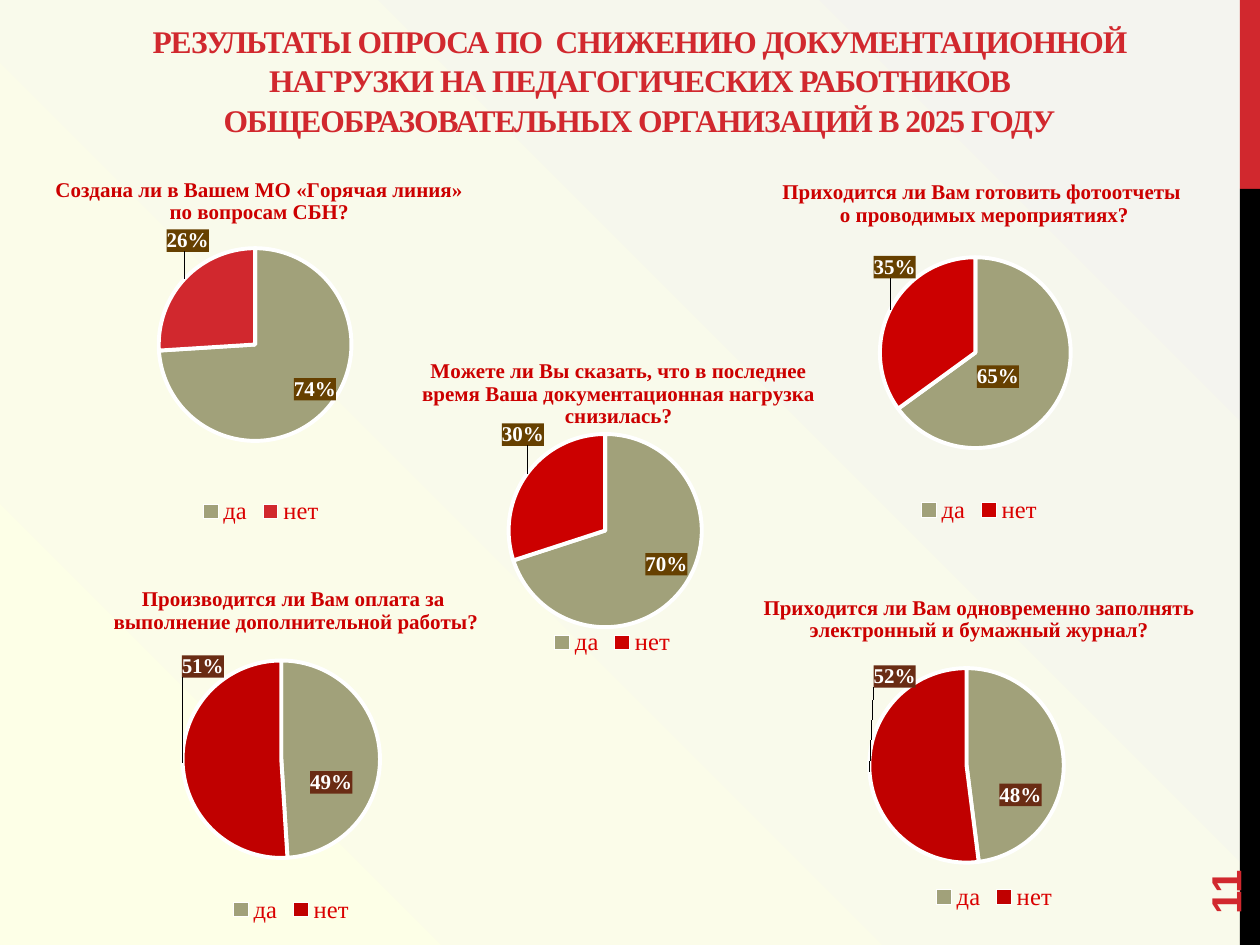
import math
from dataclasses import dataclass

from lxml import etree
from pptx import Presentation
from pptx.chart.data import CategoryChartData
from pptx.dml.color import RGBColor
from pptx.enum.chart import XL_CHART_TYPE, XL_LEGEND_POSITION
from pptx.enum.shapes import MSO_SHAPE
from pptx.enum.text import MSO_ANCHOR, PP_ALIGN
from pptx.oxml import parse_xml
from pptx.oxml.ns import nsdecls, qn
from pptx.util import Inches, Pt

PIE = XL_CHART_TYPE.PIE
BOTTOM = XL_LEGEND_POSITION.BOTTOM
RECTANGLE = MSO_SHAPE.RECTANGLE
CENTER = PP_ALIGN.CENTER

RED = RGBColor(0xD1, 0x28, 0x2E)
TITLE_RED = RGBColor(0xCC, 0x00, 0x00)
DARK_RED = RGBColor(0xC0, 0x00, 0x00)
LEGEND_RED = RGBColor(0xDA, 0x00, 0x00)
OLIVE = RGBColor(0xA1, 0xA1, 0x7A)
BROWN = RGBColor(0x66, 0x40, 0x00)
RUST = RGBColor(0x6A, 0x2C, 0x14)
WHITE = RGBColor(0xFF, 0xFF, 0xFF)
BLACK = RGBColor(0x00, 0x00, 0x00)
CREAM = RGBColor(0xFD, 0xFF, 0xE7)
PALE_GREY = RGBColor(0xF4, 0xF4, 0xEF)
SERIF = "Times New Roman"


@dataclass
class Survey:
    """One question; box, title, legend and labels are in slide inches."""
    question: str
    shares: tuple
    box: tuple
    plot: tuple  # fractions of the box
    title_at: tuple
    legend_at: tuple
    labels_at: tuple  # label centres
    no_color: RGBColor
    label_color: RGBColor


SURVEYS = [
    Survey("Создана ли в Вашем МО «Горячая линия»\nпо вопросам СБН?",
           (0.74, 0.26), (-0.45, 1.22, 5, 3), (0.09, 0.25, 0.81, 0.51),
           (0.41, 1.37), (1.55, 3.93), ((2.5, 3.09), (1.49, 1.91)), RED, BROWN),
    Survey("Приходится ли Вам готовить фотоотчеты\n о проводимых мероприятиях?",
           (0.65, 0.35), (5.34, 1.24, 4.85, 2.97), (0.09, 0.27, 0.81, 0.51),
           (6.18, 1.39), (7.25, 3.9), ((7.92, 2.99), (7.1, 2.12)), TITLE_RED, BROWN),
    Survey("Приходится ли Вам одновременно заполнять\nэлектронный и бумажный журнал?",
           (0.48, 0.52), (5.5, 4.56, 4.72, 2.86), (0.02, 0.26, 0.88, 0.54),
           (6.03, 4.69), (7.37, 6.97), ((8.1, 6.31), (7.1, 5.37)), DARK_RED, RUST),
    Survey("Производится ли Вам оплата за\n выполнение дополнительной работы?",
           (0.49, 0.51), (-0.09, 4.53, 4.79, 2.85), (0.01, 0.25, 0.95, 0.55),
           (0.83, 4.62), (1.79, 7.09), ((2.63, 6.21), (1.61, 5.29)), DARK_RED, RUST),
    Survey("Можете ли Вы сказать, что в последнее\n"
           "время Ваша документационная нагрузка\nснизилась?",
           (0.7, 0.3), (2.85, 2.65, 4.07, 2.84), (0.04, 0.28, 0.88, 0.54),
           (3.32, 2.81), (4.34, 4.95), ((5.29, 4.48), (4.15, 3.45)), TITLE_RED, BROWN),
]


def style_font(font, name, size, color, bold=False):
    font.name, font.size, font.bold = name, Pt(size), bold
    font.color.rgb = color


def manual_layout(x, y, size=None, inner=False):
    """Layout element in fractions of the chart box."""
    target = '<c:layoutTarget val="inner"/>' if inner else ""
    modes = "" if size is None and not inner else ""
    if inner or size == "edge":
        modes = '<c:xMode val="edge"/><c:yMode val="edge"/>'
    extent = ""
    if inner:
        extent = f'<c:w val="{size[0]}"/><c:h val="{size[1]}"/>'
    return parse_xml(
        f'<c:layout {nsdecls("c")}><c:manualLayout>{target}{modes}'
        f'<c:x val="{x:.4f}"/><c:y val="{y:.4f}"/>{extent}'
        f'</c:manualLayout></c:layout>')


def place(element, layout, after):
    """Put the layout behind the named child, replacing an earlier one."""
    for old in element.findall(qn("c:layout")):
        element.remove(old)
    if after is None:
        element.insert(0, layout)
    else:
        element.find(qn(after)).addnext(layout)


def add_labels(plot, survey):
    """Percent labels, moved from the slice centres to their own places."""
    left, top, width, height = survey.box
    x, y, w, h = survey.plot
    center_x, center_y = left + width * (x + w / 2), top + height * (y + h / 2)
    reach = min(width * w, height * h) / 4

    plot.has_data_labels = True
    labels = plot.data_labels
    labels.show_value, labels.show_percentage = True, False
    labels.number_format, labels.number_format_is_linked = "0%", False
    style_font(labels.font, SERIF, 12, WHITE, True)
    fill = parse_xml(f'<c:spPr {nsdecls("c", "a")}><a:solidFill>'
                     f'<a:srgbClr val="{survey.label_color}"/></a:solidFill></c:spPr>')
    element = plot._element.find(qn("c:dLbls"))
    element.find(qn("c:numFmt")).addnext(fill)
    text = etree.tostring(element.find(qn("c:txPr"))).decode()
    flags = "".join(f'<c:show{name} val="{int(name == "Val")}"/>' for name in
                    ("LegendKey", "Val", "CatName", "SerName", "Percent", "BubbleSize"))
    start = 0
    for index, (share, target) in enumerate(zip(survey.shares, survey.labels_at)):
        angle = 2 * math.pi * (start + share / 2)
        start += share
        shift_x = (target[0] - center_x - reach * math.sin(angle)) / width
        shift_y = (target[1] - center_y + reach * math.cos(angle)) / height
        label = parse_xml(
            f'<c:dLbl {nsdecls("c", "a")}><c:idx val="{index}"/>'
            f'<c:numFmt formatCode="0%" sourceLinked="0"/>'
            f'{etree.tostring(fill).decode()}{text}<c:dLblPos val="ctr"/>{flags}</c:dLbl>')
        place(label, manual_layout(shift_x, shift_y), "c:idx")
        element.insert(index, label)
    for old in element.findall(qn("c:showLeaderLines")):
        element.remove(old)
    element.append(parse_xml(f'<c:showLeaderLines {nsdecls("c")} val="1"/>'))
    # Labels belong to the series so that each slice can have its own
    plot.series[0]._element.find(qn("c:cat")).addprevious(element)


def add_survey(slide, survey):
    left, top, width, height = survey.box
    data = CategoryChartData(number_format="0%")
    data.categories = ["да", "нет"]
    data.add_series("Series 1", survey.shares)
    chart = slide.shapes.add_chart(PIE, *map(Inches, survey.box), data).chart
    style_font(chart.font, "Arial", 10, BLACK)

    # Question
    frame = chart.chart_title.text_frame
    frame.text = survey.question
    for paragraph in frame.paragraphs:
        for run in paragraph.runs:
            style_font(run.font, SERIF, 12, TITLE_RED, True)
    chart.chart_title.include_in_layout = False

    # Legend
    chart.has_legend = True
    chart.legend.position = BOTTOM
    chart.legend.include_in_layout = False
    style_font(chart.legend.font, SERIF, 14, LEGEND_RED)

    for part, after, (x, y) in (
            (chart.chart_title._element, "c:tx", survey.title_at),
            (chart.legend._element, "c:legendPos", survey.legend_at)):
        place(part, manual_layout((x - left) / width, (y - top) / height, "edge"), after)

    # Slices
    plot = chart.plots[0]
    plot.vary_by_categories = True
    for index, color in enumerate((OLIVE, survey.no_color)):
        slice_format = plot.series[0].points[index].format
        slice_format.fill.solid()
        slice_format.fill.fore_color.rgb = color
        slice_format.line.color.rgb = WHITE
        slice_format.line.width = Pt(2.25)
    x, y, *size = survey.plot
    plot_area = plot._element.getparent()
    place(plot_area, manual_layout(x, y, size, inner=True), None)
    add_labels(plot, survey)


def add_text(slide, box, text, font_name, size, anchor):
    shape = slide.shapes.add_textbox(*map(Inches, box))
    frame = shape.text_frame
    frame.word_wrap, frame.vertical_anchor = True, anchor
    frame.text = text
    style_font(frame.paragraphs[0].runs[0].font, font_name, size, RED, True)
    return shape


def add_heading(slide, box):
    shape = add_text(slide, box, "РЕЗУЛЬТАТЫ ОПРОСА ПО  СНИЖЕНИЮ ДОКУМЕНТАЦИОННОЙ "
                     "НАГРУЗКИ НА ПЕДАГОГИЧЕСКИХ РАБОТНИКОВ "
                     "ОБЩЕОБРАЗОВАТЕЛЬНЫХ ОРГАНИЗАЦИЙ В 2025 ГОДУ",
                     SERIF, 18, MSO_ANCHOR.BOTTOM)
    paragraph = shape.text_frame.paragraphs[0]
    paragraph.alignment, paragraph.line_spacing = CENTER, 1.05
    paragraph.runs[0].font._element.set("spc", "-60")


def add_backdrop(slide):
    fill = slide.background.fill
    fill.gradient()
    fill.gradient_angle = 45
    for stop, color in zip(fill.gradient_stops, (CREAM, PALE_GREY)):
        stop.color.rgb = color
    for top, height, color in ((0, 1.5, RED), (1.5, 6, BLACK)):
        bar = slide.shapes.add_shape(RECTANGLE, *map(Inches, (9.84, top, 0.16, height)))
        bar.shadow.inherit = False
        bar.fill.solid()
        bar.fill.fore_color.rgb = color
        bar.line.fill.background()


def main():
    presentation = Presentation()
    presentation.slide_width, presentation.slide_height = Inches(10), Inches(7.5)
    slide = presentation.slides.add_slide(presentation.slide_layouts[6])
    add_backdrop(slide)
    add_heading(slide, (0.5, 0.17, 9.15, 0.98))
    number = add_text(slide, (9, 6.44, 1.44, 0.4), "11", "Arial", 24, MSO_ANCHOR.MIDDLE)
    number.rotation = 270
    for survey in SURVEYS:
        add_survey(slide, survey)
    presentation.save("out.pptx")


if __name__ == "__main__":
    main()
